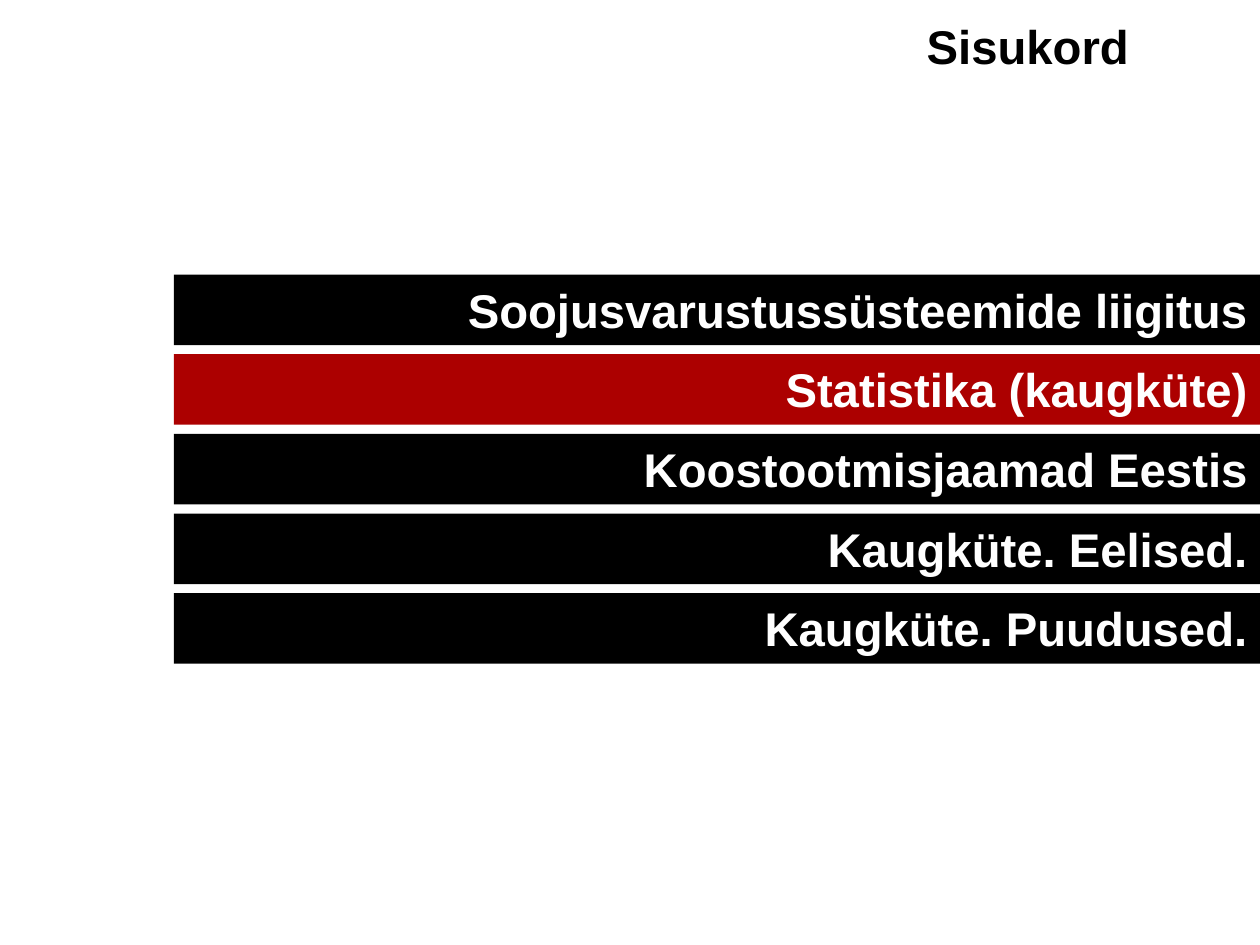
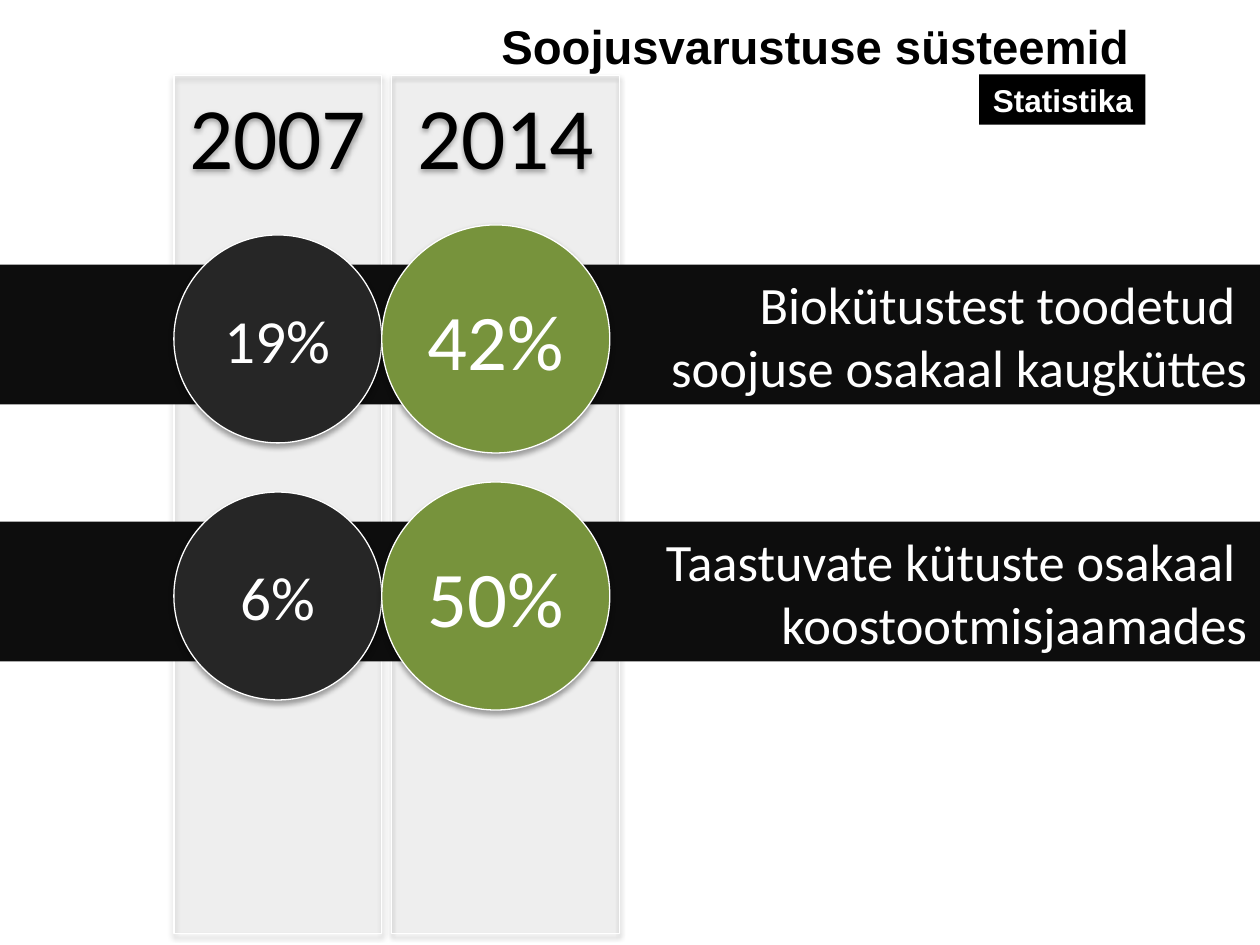
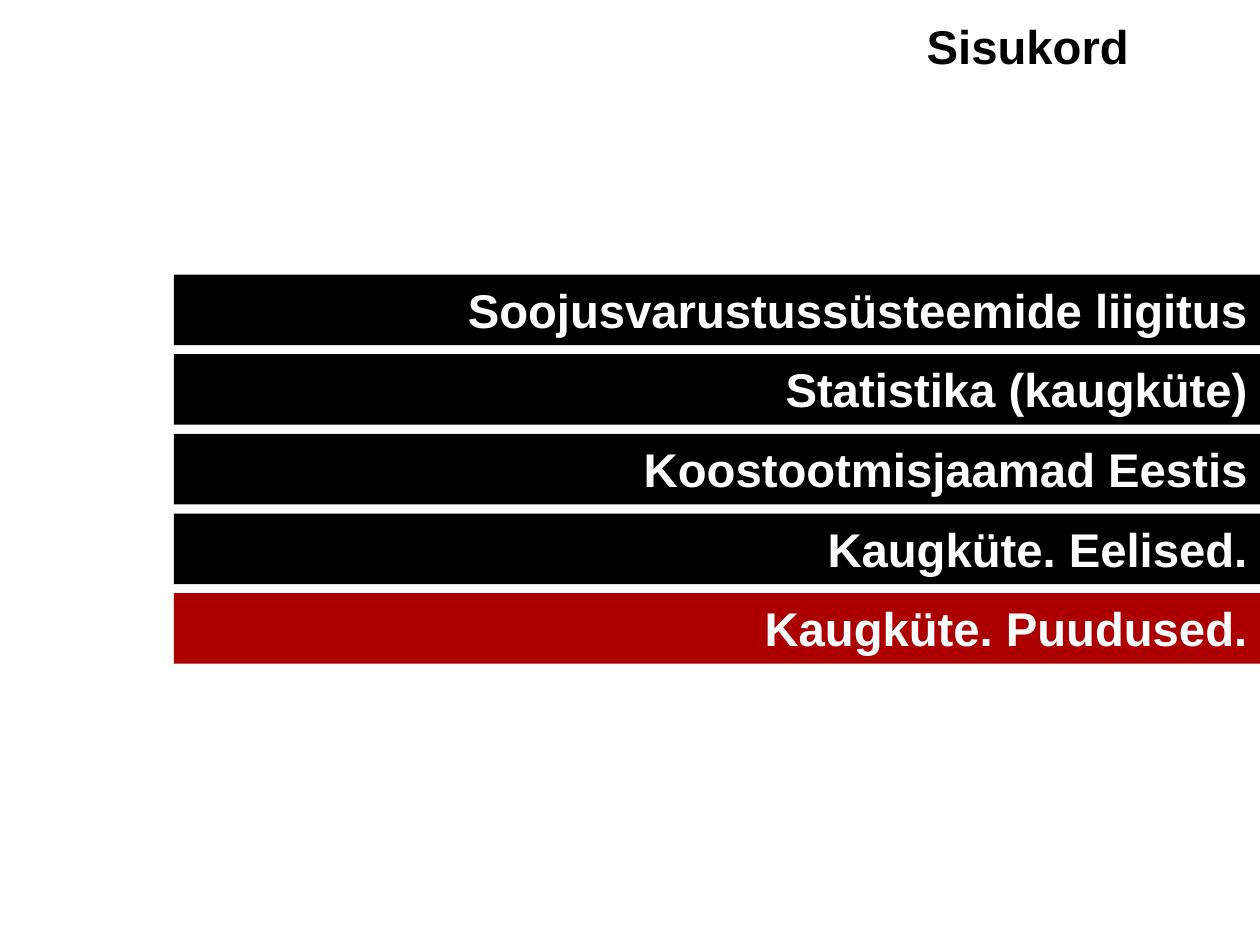
import pptx
import pptx.util
import pptx.dml.color
import pptx.enum.shapes
import pptx.enum.text
import pptx.oxml
import pptx.oxml.ns

COLORS = {
    "ink": "000000",
    "paper": "FFFFFF",
    "accent": "AC0000",
    "band": "0D0D0D",
    "earlier": "262626",
    "later": "77933C",
}
SHAPES = pptx.enum.shapes.MSO_SHAPE
ALIGN = pptx.enum.text.PP_ALIGN
ANCHOR = pptx.enum.text.MSO_ANCHOR
FIT = pptx.enum.text.MSO_AUTO_SIZE

TOPICS = [
    "Soojusvarustussüsteemide liigitus",
    "Statistika (kaugküte)",
    "Koostootmisjaamad Eestis",
    "Kaugküte. Eelised.",
    "Kaugküte. Puudused.",
]


class Painter:
    """Style and current page; lengths are cells of a 100 by 75 grid."""

    def __init__(self):
        self.deck = pptx.Presentation()
        self.deck.slide_width = pptx.util.Inches(10)
        self.deck.slide_height = pptx.util.Inches(7.5)
        self.page = None

    def cells(self, *counts):
        return [round(count * self.deck.slide_width / 100) for count in counts]

    def color(self, name):
        return pptx.dml.color.RGBColor.from_string(COLORS[name])

    def put_text(self, box, text, size, font="Arial", color="paper", align=ALIGN.RIGHT,
                 anchor=ANCHOR.MIDDLE, bold=False):
        frame = box.text_frame
        frame.text = text
        frame.word_wrap = True
        frame.vertical_anchor = anchor
        for para in frame.paragraphs:
            para.alignment = align
            for span in para.runs:
                span.font.name = font
                span.font.size = pptx.util.Pt(size)
                span.font.bold = bold
                span.font.color.rgb = self.color(color)

    def shape(self, kind, left, top, width, height, fill):
        box = self.page.shapes.add_shape(kind, *self.cells(left, top, width, height))
        box.shadow.inherit = False
        box.fill.solid()
        box.fill.fore_color.rgb = self.color(fill)
        box.line.fill.background()
        return box

    def raise_up(self, box):
        """Give a shape a thin white outline and a soft shadow below it."""
        box.line.color.rgb = self.color("paper")
        box.line.width = pptx.util.Pt(0.75)
        effects = box._element.spPr.find(pptx.oxml.ns.qn("a:effectLst"))
        effects.append(pptx.oxml.parse_xml(
            f'<a:outerShdw {pptx.oxml.ns.nsdecls("a")} blurRad="{pptx.util.Pt(3.1)}" '
            f'dist="{pptx.util.Pt(1.8)}" dir="5400000" rotWithShape="0">'
            f'<a:srgbClr val="{COLORS["ink"]}"><a:alpha val="35000"/></a:srgbClr>'
            '</a:outerShdw>'))

    def new_page(self, title):
        self.page = self.deck.slides.add_slide(self.deck.slide_layouts[5])
        box = self.page.shapes.title
        box.left, box.top, box.width, box.height = self.cells(16, 0, 74.6, 7.2)
        self.put_text(box, title, 27, color="ink", bold=True)
        box.text_frame.auto_size = FIT.NONE

    def label(self, text, left, top, width, height, fill="ink", size=27):
        box = self.shape(SHAPES.RECTANGLE, left, top, width, height, fill)
        self.put_text(box, text, size, anchor=ANCHOR.TOP, bold=True)
        box.text_frame.auto_size = FIT.SHAPE_TO_FIT_TEXT
        return box

    def year_panel(self, year, left, width):
        box = self.shape(SHAPES.RECTANGLE, left, 6, width, 68.1, "ink")
        fill = box._element.spPr.find(".//" + pptx.oxml.ns.qn("a:srgbClr"))
        fill.append(pptx.oxml.parse_xml(
            f'<a:alpha {pptx.oxml.ns.nsdecls("a")} val="5000"/>'))
        self.raise_up(box)
        self.put_text(box, year, 50, "Calibri", "ink", ALIGN.CENTER, ANCHOR.TOP)

    def band(self, text, top):
        box = self.shape(SHAPES.RECTANGLE, 0, top, 100, 11.1, "band")
        self.put_text(box, text, 30, "Calibri")

    def circle(self, text, left, middle, diameter, fill, size):
        box = self.shape(SHAPES.OVAL, left, middle - diameter / 2, diameter, diameter, fill)
        self.raise_up(box)
        self.put_text(box, text, size, "Calibri", align=ALIGN.CENTER)

    def contents(self, current):
        self.new_page("Sisukord")
        for row, topic in enumerate(TOPICS):
            fill = "accent" if row == current else "ink"
            self.label(topic, 13.8, 21.8 + 6.32 * row, 86.2, 5.6, fill)

    def statistics(self):
        self.new_page("Soojusvarustuse süsteemid")
        tag = self.label("Statistika", 77.7, 5.9, 13.2, 4, size=18)
        tag.text_frame.word_wrap = False

        # Year columns, with the second a little wider
        left, small, large = 13.8, 16.5, 18.1
        self.year_panel("2007", left, small)
        self.year_panel("2014", left + small + 0.8, large)

        # Bands, then the shares of both years on top
        rows = [
            ("Biokütustest toodetud \nsoojuse osakaal kaugküttes", "19%", "42%"),
            ("Taastuvate kütuste osakaal \nkoostootmisjaamades", "6%", "50%"),
        ]
        for row, (text, earlier, later) in enumerate(rows):
            top = 21 + 20.4 * row
            middle = top + 5.9
            self.band(text, top)
            self.circle(earlier, left, middle, small, "earlier", 35)
            self.circle(later, left + small, middle, large, "later", 45)


def main():
    painter = Painter()
    painter.contents(current=1)
    painter.statistics()
    painter.contents(current=4)
    painter.deck.save("out.pptx")


if __name__ == "__main__":
    main()
